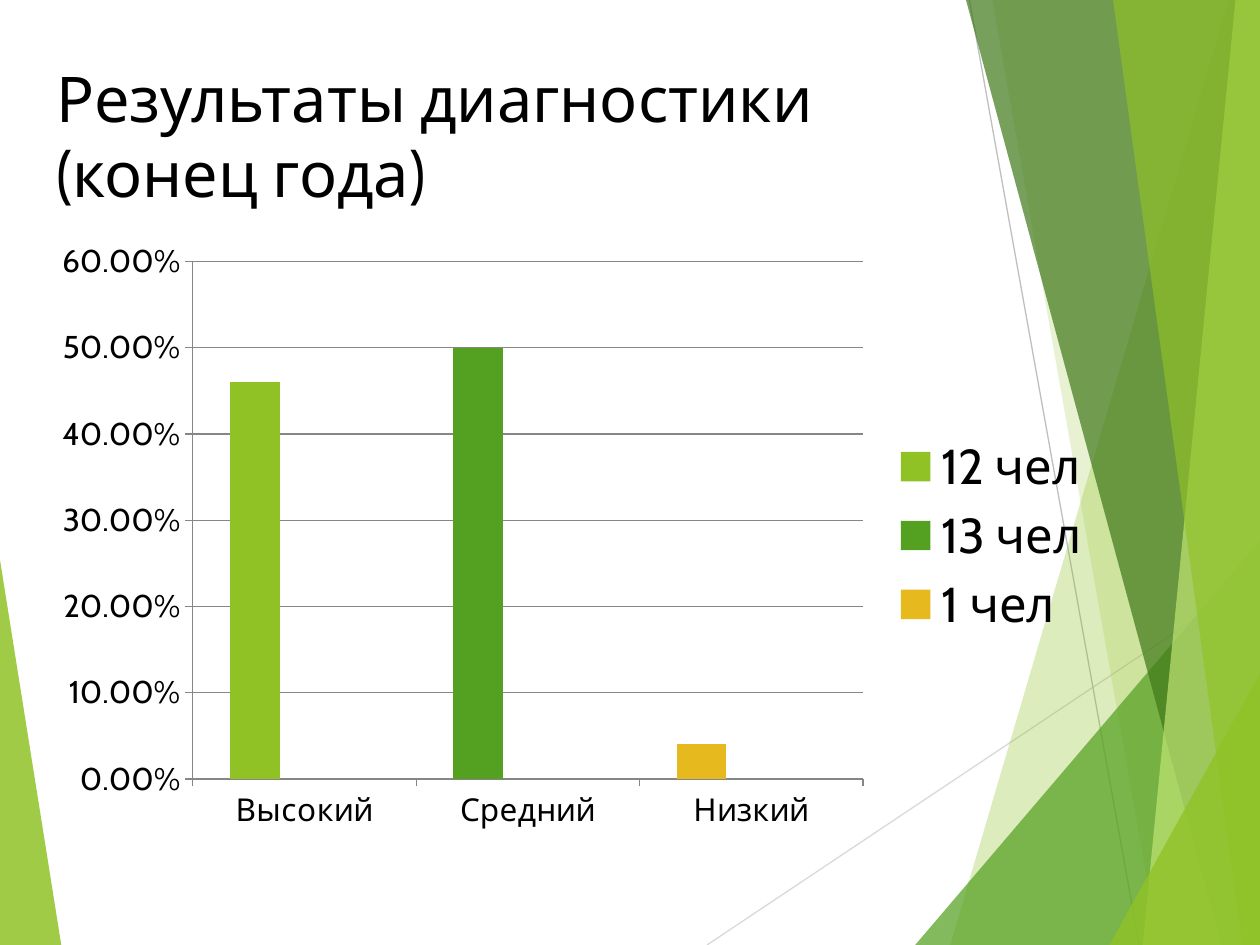
import pptx
import pptx.chart.data
import pptx.dml.color
import pptx.enum.chart
import pptx.enum.text
import pptx.oxml
import pptx.oxml.ns
import pptx.util

Pt = pptx.util.Pt
FONT = "Cabin"
LIME, GREEN, GOLD = "90C226", "54A021", "E6B91E"


def rgb(code):
    return pptx.dml.color.RGBColor.from_string(code)


def style_font(font, size):
    font.name = FONT
    font.size = Pt(size)
    font.color.rgb = rgb("000000")


def add_facet(slide, box, corners, color, opacity):
    """Draw a translucent polygon; corners are points relative to the box."""
    left, top = box[:2]
    start, *rest = [(left + x, top + y) for x, y in corners]
    builder = slide.shapes.build_freeform(*start, scale=Pt(1))
    builder.add_line_segments(rest, close=True)
    facet = builder.convert_to_shape()
    facet.shadow.inherit = False
    facet.line.fill.background()
    facet.fill.solid()
    facet.fill.fore_color.rgb = rgb(color)
    srgb = facet.fill._xPr.find(".//" + pptx.oxml.ns.qn("a:srgbClr"))
    alpha = pptx.oxml.parse_xml(
        f'<a:alpha {pptx.oxml.ns.nsdecls("a")} val="{opacity * 1000}"/>')
    srgb.append(alpha)


def add_ray(slide, box, start, end, color):
    left, top = box[:2]
    ray = slide.shapes.add_connector(
        pptx.enum.shapes.MSO_CONNECTOR.STRAIGHT,
        Pt(left + start[0]), Pt(top + start[1]),
        Pt(left + end[0]), Pt(top + end[1]))
    ray.line.color.rgb = rgb(color)
    ray.line.width = Pt(0.75)
    ray._element.spPr.append(
        pptx.oxml.parse_xml(f'<a:effectLst {pptx.oxml.ns.nsdecls("a")}/>'))


def add_left_wedge(slide, box):
    width, height = box[2:]
    add_facet(slide, box, [(0, 0), (width, height), (0, height)], LIME, 85)


def add_right_facets(slide, box):
    width, height = box[2:]
    add_ray(slide, box, (4, height), (width, 329), "D9D9D9")
    add_ray(slide, box, (154, 0), (251, height), "BFBFBF")

    # Each facet runs from its upper to its lower point, then to the right edge
    facets = [
        ((302, 0), 143, LIME, 30),
        ((167, 0), 262, LIME, 20),
        ((width, 309), 123, GREEN, 72),
        ((152, 0), 298, "3F7819", 70),
        ((306, 0), 253, "C0E474", 70),
        ((236, 0), 310, LIME, 65),
        ((width, 385), 234, LIME, 80),
    ]
    for (upper_x, upper_y), lower_x, color, opacity in facets:
        corners = [(upper_x, upper_y), (lower_x, height), (width, height)]
        if upper_x < width:
            corners.append((width, upper_y))
        add_facet(slide, box, corners, color, opacity)


def add_title(slide, box):
    title = slide.shapes.add_textbox(*map(Pt, box)).text_frame
    title.word_wrap = True
    title.vertical_anchor = pptx.enum.text.MSO_ANCHOR.MIDDLE
    title.text = "Результаты диагностики\v(конец года)"
    heading = title.paragraphs[0]
    # A line break in the paragraph splits its text into two runs
    for run in heading.runs:
        style_font(run.font, 36)


def add_results_chart(slide, box):
    results = pptx.chart.data.CategoryChartData(number_format="0%")
    results.categories = ["Высокий", "Средний", "Низкий"]
    results.add_series("12 чел", [0.46, 0.5, 0.04])
    results.add_series("13 чел", [None] * 3)
    results.add_series("1 чел", [None] * 3)
    chart = slide.shapes.add_chart(
        pptx.enum.chart.XL_CHART_TYPE.COLUMN_CLUSTERED,
        *map(Pt, box), results).chart
    chart.has_title = False
    style_font(chart.font, 18)

    # Bars: the first series has one colour for each level
    plot = chart.plots[0]
    plot.vary_by_categories = False
    plot.gap_width = 150
    plot.overlap = 0
    for index, (series, color) in enumerate(
            zip(plot.series, (LIME, GREEN, GOLD))):
        level = plot.series[0].points[index]
        for part in (series, level):
            part.format.fill.solid()
            part.format.fill.fore_color.rgb = rgb(color)

    # Axes
    percent, levels = chart.value_axis, chart.category_axis
    percent.minimum_scale, percent.maximum_scale = 0, 0.6
    percent.major_unit = 0.1
    percent.has_major_gridlines = True
    percent.tick_labels.number_format = "0.00%"
    percent.tick_labels.number_format_is_linked = False
    for axis in (percent, levels):
        axis.major_tick_mark = pptx.enum.chart.XL_TICK_MARK.OUTSIDE
        style_font(axis.tick_labels.font, 18)
    for part in (percent, levels, percent.major_gridlines):
        part.format.line.color.rgb = rgb("868686")
        part.format.line.width = Pt(0.75)

    # Legend
    chart.has_legend = True
    chart.legend.position = pptx.enum.chart.XL_LEGEND_POSITION.RIGHT
    chart.legend.include_in_layout = False
    style_font(chart.legend.font, 28)

    # Plot area as fractions of the chart
    area = {"x": 0.14, "y": 0.05, "w": 0.63, "h": 0.85}
    modes = "".join(f'<c:{side}Mode val="edge"/>' for side in "xy")
    sizes = "".join(f'<c:{key} val="{value}"/>' for key, value in area.items())
    plot_area = chart._chartSpace.chart.plotArea
    for layout in plot_area.findall(pptx.oxml.ns.qn("c:layout")):
        plot_area.remove(layout)
    plot_area.insert(0, pptx.oxml.parse_xml(
        f'<c:layout {pptx.oxml.ns.nsdecls("c")}><c:manualLayout>'
        f'<c:layoutTarget val="inner"/>{modes}{sizes}'
        '</c:manualLayout></c:layout>'))


def main():
    deck = pptx.Presentation()
    deck.slide_width, deck.slide_height = Pt(720), Pt(540)
    slide = deck.slides.add_slide(deck.slide_layouts[6])
    add_left_wedge(slide, (0, 320, 35, 220))
    add_right_facets(slide, (400, 0, 320, 540))
    add_title(slide, (25, 25, 500, 104))
    add_results_chart(slide, (25, 132, 608, 348))
    deck.save("out.pptx")


if __name__ == "__main__":
    main()
